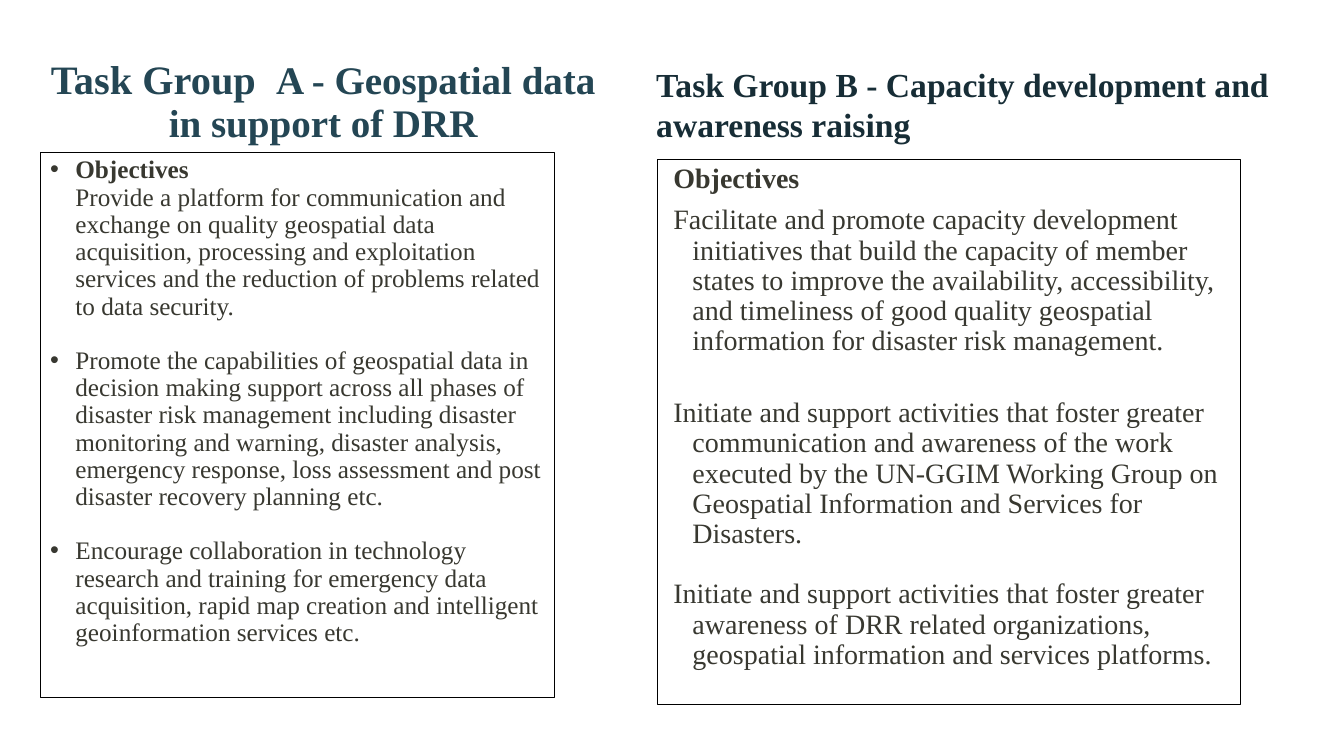
import pptx
import pptx.util
import pptx.dml.color
import pptx.enum.shapes
import pptx.enum.text
import lxml.etree

RGB = pptx.dml.color.RGBColor
HEADING_A = RGB(0x24, 0x46, 0x54)
HEADING_B = RGB(0x17, 0x2D, 0x36)
BODY = RGB(0x38, 0x38, 0x30)
WHITE = RGB(0xFF, 0xFF, 0xFF)
BLACK = RGB(0x00, 0x00, 0x00)
FONT = "Times New Roman"
WIDTH, HEIGHT = 13.33, 7.5

# Shares of the slide's size: left, top, width, height
TITLE_A_AREA = (0.03, 0.0773, 0.4209, 0.1733)
TITLE_B_AREA = (0.4809, 0.0773, 0.4891, 0.1213)
PANEL_A_AREA = (0.03, 0.2013, 0.3826, 0.7213)
PANEL_B_AREA = (0.4891, 0.2107, 0.4336, 0.7213)

OBJECTIVES_A = [
    "Provide a platform for communication and exchange on quality geospatial data "
    "acquisition, processing and exploitation services and the reduction of problems "
    "related to data security.",
    "Promote the capabilities of geospatial data in decision making support across all "
    "phases of disaster risk management including disaster monitoring and warning, "
    "disaster analysis, emergency response, loss assessment and post disaster recovery "
    "planning etc.",
    "Encourage collaboration in technology research and training for emergency data "
    "acquisition, rapid map creation and intelligent geoinformation services etc.",
]
OBJECTIVES_B = [
    "Facilitate and promote capacity development initiatives that build the capacity of "
    "member states to improve the availability, accessibility, and timeliness of good "
    "quality geospatial information for disaster risk management.",
    "Initiate and support activities that foster greater communication and awareness of "
    "the work executed by the UN-GGIM Working Group on Geospatial Information and "
    "Services for Disasters.",
    "Initiate and support activities that foster greater awareness of DRR related "
    "organizations, geospatial information and services platforms.",
]


def place(area):
    sides = (WIDTH, HEIGHT, WIDTH, HEIGHT)
    return [pptx.util.Inches(share * side) for share, side in zip(area, sides)]


def add_run(paragraph, text, size, color, bold=False):
    run = paragraph.add_run()
    run.text = text
    run.font.name = FONT
    run.font.size = pptx.util.Pt(size)
    run.font.bold = bold
    run.font.color.rgb = color


def format_title(title):
    title.left, title.top, title.width, title.height = place(TITLE_A_AREA)
    frame = title.text_frame
    frame.word_wrap = True
    frame.auto_size = pptx.enum.text.MSO_AUTO_SIZE.NONE
    frame.vertical_anchor = pptx.enum.text.MSO_ANCHOR.MIDDLE
    frame.margin_bottom = pptx.util.Inches(0.47)
    heading = frame.paragraphs[0]
    heading.alignment = pptx.enum.text.PP_ALIGN.CENTER
    heading.line_spacing = 0.9
    add_run(heading, "Task Group  ", 28.8, HEADING_A, True)
    add_run(heading, "A - Geospatial data in support of DRR", 27.9, HEADING_A, True)


def add_heading(slide, text):
    frame = slide.shapes.add_textbox(*place(TITLE_B_AREA)).text_frame
    frame.word_wrap = True
    add_run(frame.paragraphs[0], text, 24, HEADING_B, True)


def add_panel(slide, area):
    panel = slide.shapes.add_shape(
        pptx.enum.shapes.MSO_SHAPE.RECTANGLE, *place(area))
    panel.shadow.inherit = False
    panel.fill.solid()
    panel.fill.fore_color.rgb = WHITE
    panel.line.color.rgb = BLACK
    panel.line.width = pptx.util.Pt(0.75)
    panel.text_frame.word_wrap = True
    panel.text_frame.vertical_anchor = pptx.enum.text.MSO_ANCHOR.TOP
    return panel.text_frame


def add_item(frame, first, hanging, before=0, after=0, bullet=False):
    item = frame.paragraphs[0] if first else frame.add_paragraph()
    item.alignment = pptx.enum.text.PP_ALIGN.LEFT
    item.line_spacing = 0.9
    item.space_before = pptx.util.Pt(before)
    item.space_after = pptx.util.Pt(after)
    properties = item._p.get_or_add_pPr()
    properties.set("marL", str(pptx.util.Inches(0.25)))
    properties.set("indent", str(-pptx.util.Inches(hanging)))
    if bullet:
        namespace = properties.nsmap["a"]
        font = lxml.etree.SubElement(properties, f"{{{namespace}}}buFont")
        font.set("typeface", "Arial")
        mark = lxml.etree.SubElement(properties, f"{{{namespace}}}buChar")
        mark.set("char", "•")
    return item


def add_objectives_a(slide):
    frame = add_panel(slide, PANEL_A_AREA)
    for index, objective in enumerate(OBJECTIVES_A):
        first = index == 0
        item = add_item(frame, first, 0.25, before=0 if first else 19.4, bullet=True)
        if first:
            add_run(item, "Objectives", 18, BODY, True)
            item.add_line_break()
        add_run(item, objective, 18, BODY)


def add_objectives_b(slide):
    frame = add_panel(slide, PANEL_B_AREA)
    label = add_item(frame, True, 0.19, after=8)
    add_run(label, "Objectives", 20, BODY, True)
    for index, objective in enumerate(OBJECTIVES_B):
        first = index == 0
        item = add_item(frame, False, 0.19, before=0 if first else 21.6,
                        after=8 if first else 0)
        add_run(item, objective, 20, BODY)


def main():
    deck = pptx.Presentation()
    deck.slide_width = pptx.util.Inches(WIDTH)
    deck.slide_height = pptx.util.Inches(HEIGHT)
    slide = deck.slides.add_slide(deck.slide_layouts[5])

    # Task Group A
    format_title(slide.shapes.title)
    add_objectives_a(slide)

    # Task Group B
    add_objectives_b(slide)
    add_heading(slide, "Task Group B - Capacity development and awareness raising")

    deck.save("out.pptx")


if __name__ == "__main__":
    main()
